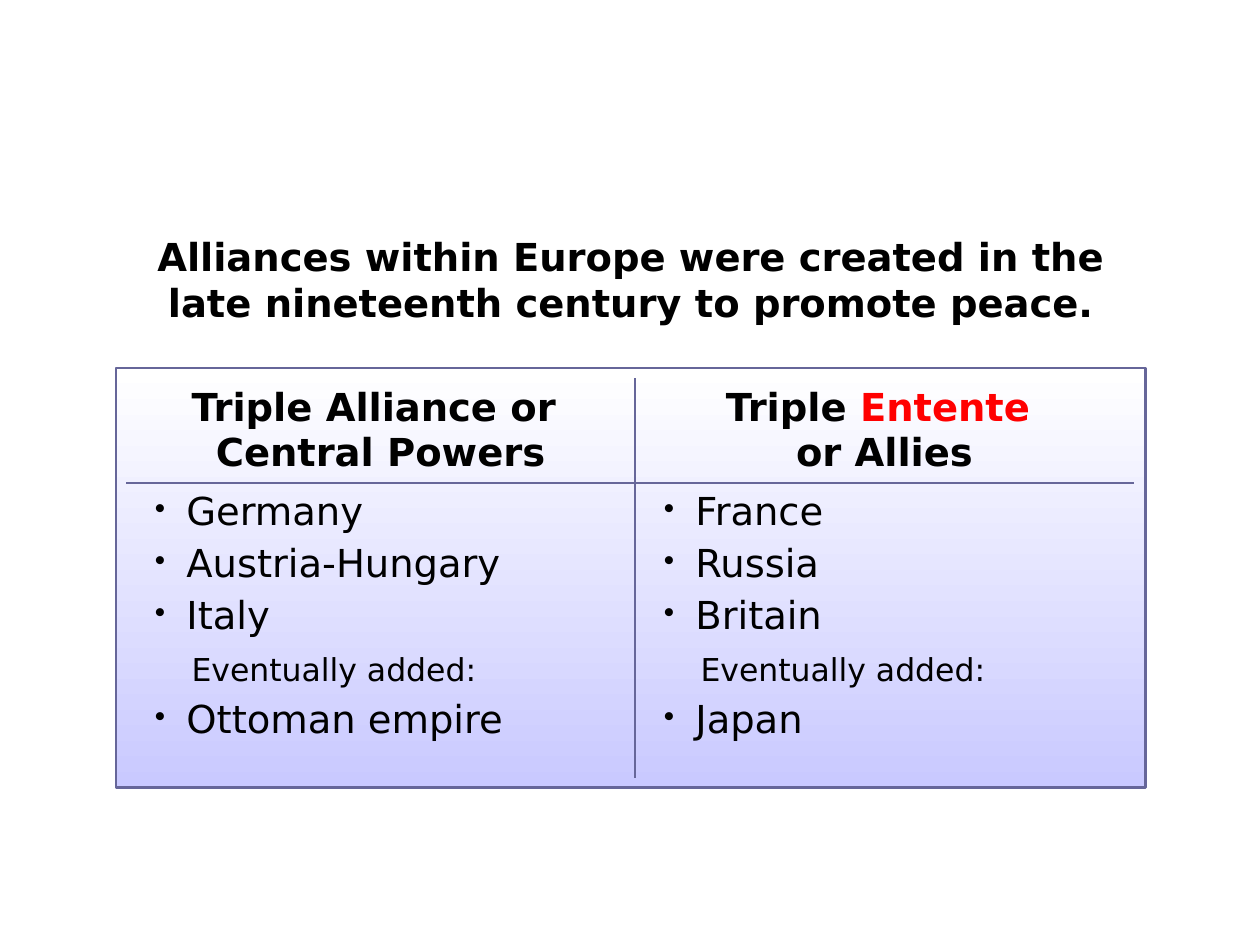
from lxml.etree import SubElement
from pptx import Presentation
from pptx.dml.color import RGBColor
from pptx.enum.shapes import MSO_SHAPE
from pptx.enum.text import MSO_ANCHOR, PP_ALIGN
from pptx.oxml.ns import qn
from pptx.util import Pt

PX = 9144
BLACK = RGBColor(0x00, 0x00, 0x00)
RED = RGBColor(0xFF, 0x00, 0x00)
WHITE = RGBColor(0xFF, 0xFF, 0xFF)
LAVENDER = RGBColor(0xC9, 0xC9, 0xFF)
SLATE = RGBColor(0x66, 0x66, 0x99)

BODY = {"name": "DejaVu Sans", "size": Pt(22), "bold": False}
HEADING = {**BODY, "bold": True}
NOTE = {**BODY, "size": Pt(18)}
MEMBER_SPACING = {"space_after": Pt(4.2)}
NOTE_SPACING = {"space_before": Pt(3.7), "space_after": Pt(5.2)}

ADDED = "Eventually added:"
ALLIANCES = [
    ([("Triple Alliance or \vCentral Powers", BLACK)],
     ["Germany", "Austria-Hungary", "Italy", ADDED, "Ottoman empire"]),
    ([("Triple ", BLACK), ("Entente \v", RED), ("or Allies", BLACK)],
     ["France", "Russia", "Britain", ADDED, "Japan"]),
]


def px(*lengths):
    return [length * PX for length in lengths]


def apply_format(target, values):
    for attribute, value in values.items():
        setattr(target, attribute, value)


def write(paragraph, pieces, font):
    for words, color in pieces:
        for index, line in enumerate(words.split("\v")):
            if index:
                paragraph.add_line_break()
            if line:
                run = paragraph.add_run()
                run.text = line
                apply_format(run.font, font)
                run.font.color.rgb = color


def set_indent(paragraph, left, hanging, bullet):
    properties = paragraph._p.get_or_add_pPr()
    properties.set("marL", str(left * PX))
    properties.set("indent", str(-hanging * PX))
    if bullet:
        SubElement(properties, qn("a:buSzPct"), val="80000")
        SubElement(properties, qn("a:buChar"), char=bullet)
    else:
        SubElement(properties, qn("a:buNone"))


def set_borders(cell, ruled_sides):
    properties = cell._tc.get_or_add_tcPr()
    for side in "LRTB":
        border = SubElement(properties, qn(f"a:ln{side}"), w=str(Pt(1)))
        if side in ruled_sides:
            fill = SubElement(border, qn("a:solidFill"))
            SubElement(fill, qn("a:srgbClr"), val=str(SLATE))
        else:
            SubElement(border, qn("a:noFill"))
    cell.fill.background()


def add_statement(slide, left, top, width, height):
    frame = slide.shapes.add_textbox(*px(left, top, width, height)).text_frame
    frame.word_wrap = True
    paragraph = frame.paragraphs[0]
    paragraph.alignment = PP_ALIGN.CENTER
    write(paragraph, [("Alliances within Europe were created in the late "
                       "nineteenth century to promote peace.", BLACK)], HEADING)


def add_panel(slide, left, top, width, height):
    panel = slide.shapes.add_shape(MSO_SHAPE.RECTANGLE, *px(left, top, width, height))
    panel.shadow.inherit = False
    panel.fill.gradient()
    panel.fill.gradient_angle = 270
    for stop, color in zip(panel.fill.gradient_stops, (WHITE, LAVENDER)):
        stop.color.rgb = color
    panel.line.color.rgb = SLATE
    panel.line.width = Pt(1.5)


def fill_members(cell, members):
    frame = cell.text_frame
    for index, member in enumerate(members):
        paragraph = frame.add_paragraph() if index else frame.paragraphs[0]
        is_note = member == ADDED
        apply_format(paragraph, NOTE_SPACING if is_note else MEMBER_SPACING)
        if is_note:
            set_indent(paragraph, 42, 0, None)
        else:
            set_indent(paragraph, 38, 25, "•")
        write(paragraph, [(member, BLACK)], NOTE if is_note else BODY)


def add_alliances(slide, left, top, width, height):
    header_height, first_width = 83, 404
    table = slide.shapes.add_table(2, 2, *px(left, top, width, height)).table
    apply_format(table, {"first_row": False, "horz_banding": False})
    table.columns[0].width, table.columns[1].width = px(first_width, width - first_width)
    table.rows[0].height, table.rows[1].height = px(header_height, height - header_height)
    for column, (title, members) in enumerate(ALLIANCES):
        inner_side = "RL"[column]
        header, body = table.cell(0, column), table.cell(1, column)
        set_borders(header, inner_side + "B")
        set_borders(body, inner_side + "T")
        header.vertical_anchor = MSO_ANCHOR.MIDDLE
        heading = header.text_frame.paragraphs[0]
        heading.alignment = PP_ALIGN.CENTER
        write(heading, title, HEADING)
        fill_members(body, members)


def main():
    presentation = Presentation()
    presentation.slide_width, presentation.slide_height = px(1000, 750)
    slide = presentation.slides.add_slide(presentation.slide_layouts[6])
    add_panel(slide, 92, 292, 817, 333)
    add_statement(slide, 92, 180, 817, 83)
    add_alliances(slide, 100, 300, 800, 317)
    presentation.save("out.pptx")


if __name__ == "__main__":
    main()
